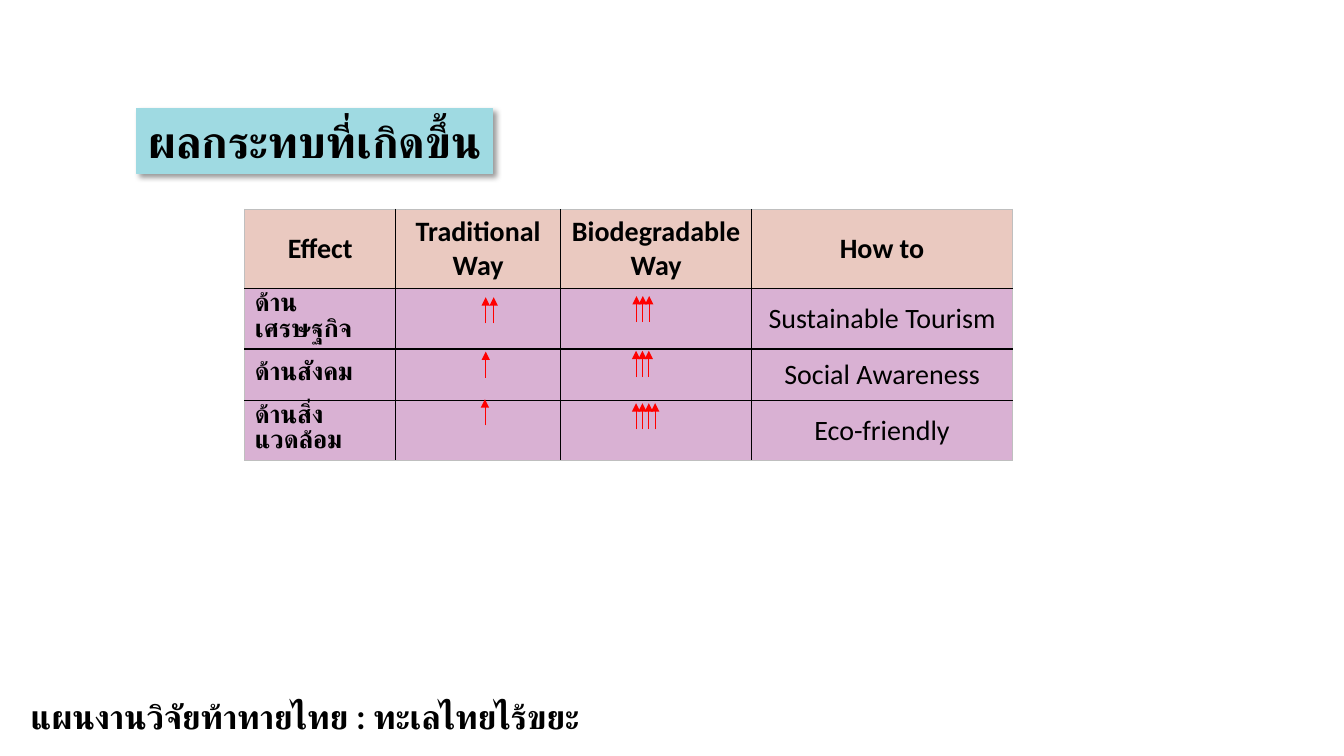
from lxml import etree
from pptx import Presentation
from pptx.dml.color import RGBColor
from pptx.enum.shapes import MSO_CONNECTOR, MSO_SHAPE
from pptx.enum.text import MSO_ANCHOR, PP_ALIGN
from pptx.oxml.ns import qn
from pptx.util import Cm, Pt

STRAIGHT = MSO_CONNECTOR.STRAIGHT
RECT, ROUNDED = MSO_SHAPE.RECTANGLE, MSO_SHAPE.ROUNDED_RECTANGLE
MIDDLE, TOP = MSO_ANCHOR.MIDDLE, MSO_ANCHOR.TOP
LEFT, CENTER = PP_ALIGN.LEFT, PP_ALIGN.CENTER

COLORS = {
    "text": "000000", "title": "9FDAE2", "header": "EAC9C0", "body": "D9B1D3",
    "arrow": "FF0000", "grid": "000000", "edge": "BFBFBF",
}
ARROW_LENGTH = 0.66
COLUMN_WIDTHS = [3.8, 4.16, 4.81, 6.58]
ROW_HEIGHTS = [1.98, 1.53, 1.29, 1.53]
EFFECTS = [
    ["Effect", "Traditional Way", "Biodegradable\nWay", "How to"],
    ["ด้านเศรษฐกิจ", "", "", "Sustainable Tourism"],
    ["ด้านสังคม", "", "", "Social Awareness"],
    ["ด้านสิ่งแวดล้อม", "", "", "Eco-friendly"],
]
# Left, top, number of arrows and pitch of each rating
RATINGS = [
    (12.24, 7.49, 2, 0.2), (16.04, 7.46, 3, 0.16),
    (12.24, 8.86, 1, 0), (16.03, 8.84, 3, 0.16),
    (12.22, 10.06, 1, 0), (16.03, 10.16, 4, 0.16),
]


def rgb(name):
    return RGBColor.from_string(COLORS[name])


def add_node(parent, tag, **attributes):
    values = {key: str(value) for key, value in attributes.items()}
    return etree.SubElement(parent, qn(tag), values)


class EffectSlide:
    def __init__(self, slide, font="Calibri"):
        self.slide = slide
        self.font = font

    def set_text(self, frame, text, align=CENTER, pitch=None, **font_values):
        frame.text = text
        style = {"name": self.font, "size": Pt(20), "bold": True, **font_values}
        for paragraph in frame.paragraphs:
            paragraph.alignment = align
            if pitch:
                paragraph.line_spacing = Pt(pitch)
            for run in paragraph.runs:
                for key, value in style.items():
                    setattr(run.font, key, value)
                run.font.color.rgb = rgb("text")
                # Thai letters use the complex script font
                add_node(run.font._element, "a:cs", typeface=style["name"])

    def label(self, kind, box, text, fill=None, anchor=MIDDLE, **text_format):
        label = self.slide.shapes.add_shape(kind, *map(Cm, box))
        label.shadow.inherit = False
        if fill:
            label.fill.solid()
            label.fill.fore_color.rgb = rgb(fill)
            label.line.color.rgb = rgb(fill)
            label.line.width = Pt(0.75)
        else:
            label.fill.background()
            label.line.fill.background()
        label.text_frame.word_wrap = True
        label.text_frame.vertical_anchor = anchor
        self.set_text(label.text_frame, text, **text_format)
        return label

    def drop_shadow(self, shape):
        effects = shape._element.spPr.find(qn("a:effectLst"))
        shadow = add_node(effects, "a:outerShdw", blurRad=Pt(4), dist=Pt(3),
                          dir=45 * 60000, algn="tl", rotWithShape=0)
        color = add_node(shadow, "a:srgbClr", val=COLORS["text"])
        add_node(color, "a:alpha", val=40000)

    def borders(self, cell, outer_sides):
        properties = cell._tc.get_or_add_tcPr()
        for index, (side, is_outer) in enumerate(outer_sides.items()):
            border = etree.Element(qn("a:" + side), w=str(Pt(1)))
            fill = add_node(border, "a:solidFill")
            add_node(fill, "a:srgbClr", val=COLORS["edge" if is_outer else "grid"])
            properties.insert(index, border)

    def table(self, left, top, rows, widths, heights):
        box = map(Cm, (left, top, sum(widths), sum(heights)))
        table = self.slide.shapes.add_table(len(rows), len(widths), *box).table
        for column, width in zip(table.columns, widths):
            column.width = Cm(width)
        for row, height in zip(table.rows, heights):
            row.height = Cm(height)
        for r, texts in enumerate(rows):
            for c, text in enumerate(texts):
                cell = table.cell(r, c)
                cell.vertical_anchor = MIDDLE
                cell.fill.solid()
                cell.fill.fore_color.rgb = rgb("body" if r else "header")
                self.borders(cell, {
                    "lnL": c == 0, "lnR": c == len(widths) - 1,
                    "lnT": r == 0, "lnB": r == len(rows) - 1,
                })
                if r and c == 0:
                    self.set_text(cell.text_frame, text, LEFT, 18, size=Pt(18))
                else:
                    self.set_text(cell.text_frame, text, bold=r == 0)

    def rating(self, left, top, count, pitch):
        for step in range(count):
            x = Cm(left + step * pitch)
            arrow = self.slide.shapes.add_connector(
                STRAIGHT, x, Cm(top + ARROW_LENGTH), x, Cm(top))
            arrow.line.color.rgb = rgb("arrow")
            arrow.line.width = Pt(0.5)
            add_node(arrow.line._get_or_add_ln(), "a:tailEnd", type="triangle")
            add_node(arrow._element.spPr, "a:effectLst")


def main():
    deck = Presentation()
    deck.slide_width, deck.slide_height = Cm(33.87), Cm(19.05)
    page = EffectSlide(deck.slides.add_slide(deck.slide_layouts[6]))

    # Programme name
    page.label(ROUNDED, (0.46, 17.42, 17.09, 1.27),
               "แผนงานวิจัยท้าทายไทย : ทะเลไทยไร้ขยะ",
               align=LEFT, name="Lato", size=Pt(24))

    # Effects table with its arrow ratings
    page.table(6.17, 5.28, EFFECTS, COLUMN_WIDTHS, ROW_HEIGHTS)
    for rating in RATINGS:
        page.rating(*rating)

    # Title
    title = page.label(RECT, (3.45, 2.74, 8.97, 1.63), "ผลกระทบที่เกิดขึ้น",
                       fill="title", anchor=TOP, size=Pt(32))
    page.drop_shadow(title)

    deck.save("out.pptx")


if __name__ == "__main__":
    main()
